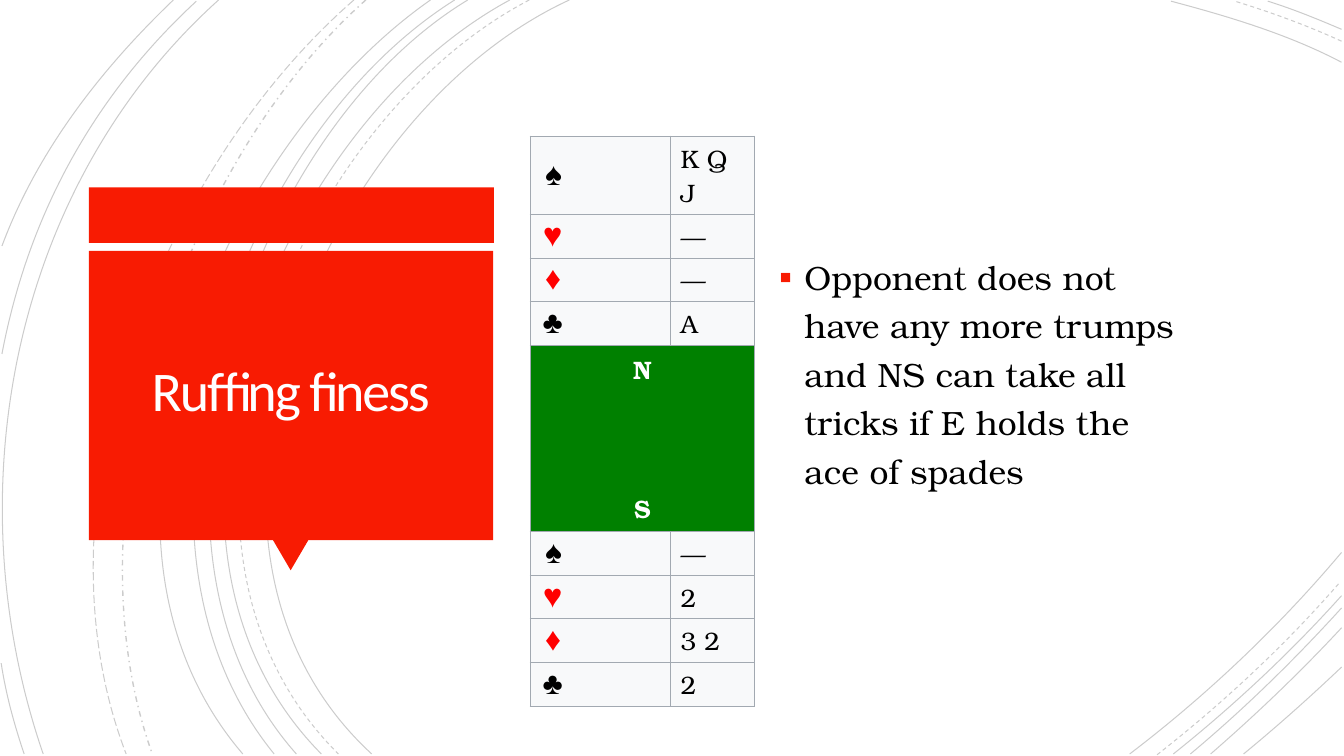
from dataclasses import dataclass
from lxml.etree import SubElement as Sub
from pptx import Presentation
from pptx.dml.color import RGBColor as RGB
from pptx.enum.dml import MSO_LINE as Dash
from pptx.enum.shapes import MSO_SHAPE as Kind
from pptx.enum.text import MSO_ANCHOR as Anchor, MSO_AUTO_SIZE as Fit, PP_ALIGN as Align
from pptx.oxml.ns import qn
from pptx.util import Cm, Pt


@dataclass
class Theme:
    red: str = "F81B02"
    cream: str = "FFFEFF"
    white: str = "FFFFFF"
    black: str = "000000"
    heart: str = "FF0000"
    green: str = "008000"
    pale: str = "F8F9FA"
    grid: str = "A2A9B1"
    head: str = "Calibri"
    text: str = "TeX Gyre Bonum"
    big: int = 40
    mid: int = 24
    small: int = 18


look = Theme()


def add_run(para, words, size, face, color, bold=False):
    run = para.add_run()
    run.text = words
    font = run.font
    font.size, font.name, font.bold = Pt(size), face, bold
    font.color.rgb = RGB.from_string(color)
    return run


def paint(item, color):
    item.fill.solid()
    item.fill.fore_color.rgb = RGB.from_string(color)


deck = Presentation()
deck.slide_width, deck.slide_height = Cm(33.87), Cm(19.05)
slide = deck.slides.add_slide(deck.slide_layouts[1])
shapes = slide.shapes
title, body = slide.placeholders

# Long arcs: top x, two control points, bottom x, dash
sweeps = [
    (14.35, (8, 2.92), (3.63, 13.72), 9.37, Dash.SOLID),
    (13.34, (7.24, 3.18), (3.12, 13.64), 8.53, Dash.DASH),
    (12.85, (6.86, 3.23), (2.79, 13.64), 8.1, Dash.SOLID),
    (11.79, (6.2, 3.38), (2.79, 13.74), 7.47, Dash.SOLID),
    (11.46, (5.87, 3.51), (2.46, 13.54), 6.91, Dash.SOLID),
    (10.85, (5.51, 3.73), (1.35, 13.44), 6.12, Dash.SOLID),
    (9.22, (4.47, 4.22), (1.65, 12.93), 3.84, Dash.DASH_DOT),
    (8.92, (3.99, 4.29), (0.74, 12.67), 3.18, Dash.LONG_DASH),
    (5.51, (0.28, 4.7), (-1.17, 12.45), 1.09, Dash.SOLID),
]
arcs = [((top, 0), one, two, (low, 19), dash) for top, one, two, low, dash in sweeps]

# Short arcs at the corners
arcs += [
    ((4.95, 0.03), (2.34, 2.44), (0.71, 5.44), (0.05, 8.92), Dash.SOLID),
    ((4.37, 0), (2.54, 1.75), (0.94, 3.81), (0.05, 6.2), Dash.SOLID),
    ((0.03, 16.71), (0.15, 17.5), (0.36, 18.26), (0.61, 19), Dash.SOLID),
    ((33.81, 1.57), (32.46, 0.86), (30.94, 0.41), (29.51, 0.03), Dash.SOLID),
    ((33.81, 1.04), (32.94, 0.64), (32, 0.3), (31.12, 0.03), Dash.DASH),
    ((33.81, 0.74), (33.2, 0.48), (32.59, 0.23), (31.95, 0.03), Dash.SOLID),
    ((28.47, 19), (30.4, 17.53), (32.23, 15.8), (33.81, 13.92), Dash.SOLID),
    ((29.16, 19.02), (30.81, 17.73), (32.39, 16.26), (33.78, 14.66), Dash.DASH),
    ((29.57, 19), (31.06, 17.81), (32.51, 16.46), (33.81, 15.01), Dash.SOLID),
    ((30, 19), (31.34, 17.88), (32.61, 16.64), (33.81, 15.32), Dash.SOLID),
    ((30.51, 19), (31.65, 18.01), (32.77, 16.94), (33.81, 15.82), Dash.SOLID),
    ((31.34, 19), (32.18, 18.31), (33, 17.58), (33.81, 16.81), Dash.SOLID),
]
for *knots, dash in arcs:
    dots = [(Cm(x), Cm(y)) for x, y in knots]
    pen = shapes.build_freeform(*dots[0])
    pen.add_line_segments(dots[1:], close=False)
    arc = pen.convert_to_shape()
    # Turn the three straight legs into one Bezier curve
    trace = arc.element.find(".//" + qn("a:path"))
    legs = trace.findall(qn("a:lnTo"))
    curve = Sub(trace, qn("a:cubicBezTo"))
    for leg in legs:
        curve.append(leg[0])
        trace.remove(leg)
    arc.shadow.inherit = False
    arc.fill.background()
    arc.line.color.rgb = RGB.from_string(look.black)
    arc.line.width = Pt(1 if dash == Dash.DASH_DOT else 0.75)
    arc.line.dash_style = dash
    tint = arc.element.find(".//" + qn("a:ln")).find(".//" + qn("a:srgbClr"))
    Sub(tint, qn("a:alpha"), val="20000")

# Red title panel with pointer
for kind, turn, *box in [
    (Kind.RECTANGLE, 0, 2.24, 4.72, 10.21, 1.4),
    (Kind.ISOSCELES_TRIANGLE, 180, 6.88, 13.61, 0.89, 0.76),
    (Kind.RECTANGLE, 0, 2.24, 6.32, 10.19, 7.29),
]:
    panel = shapes.add_shape(kind, *map(Cm, box))
    panel.rotation = turn
    panel.shadow.inherit = False
    paint(panel, look.red)
    panel.line.fill.background()

# Title and body, in front of the panel
for holder, box in [(title, (2.46, 6.53, 9.73, 6.83)), (body, (19.38, 2.64, 10.9, 14.58))]:
    shapes.element.append(holder.element)
    holder.left, holder.top, holder.width, holder.height = map(Cm, box)
    frame = holder.text_frame
    frame.word_wrap, frame.auto_size = True, Fit.NONE
    frame.vertical_anchor = Anchor.MIDDLE

frame = title.text_frame
frame.margin_left = frame.margin_right = frame.margin_top = frame.margin_bottom = Cm(0.64)
para = frame.paragraphs[0]
para.alignment, para.line_spacing = Align.CENTER, 0.85
run = add_run(para, "Ruffing finess", look.big, look.head, look.cream)
run._r.get_or_add_rPr().set("spc", "-150")

body.text_frame.margin_bottom = Cm(1.35)
para = body.text_frame.paragraphs[0]
para.alignment, para.line_spacing, para.space_before = Align.LEFT, 1.2, Pt(10)
add_run(para, "Opponent does not have any more trumps and NS can take all tricks "
        "if E holds the ace of spades", look.mid, look.text, look.black)
props = para._p.get_or_add_pPr()
props.set("marL", str(Cm(0.64)))
props.set("indent", str(-Cm(0.64)))
Sub(Sub(props, qn("a:buClr")), qn("a:srgbClr"), val=look.red)
Sub(props, qn("a:buSzPct"), val="110000")
Sub(props, qn("a:buChar"), char="▪")

# Card table: north hand, green table, south hand
suits = [("♠", look.black), ("♥", look.heart), ("♦", look.heart), ("♣", look.black)]
north = ["K Q J", "—", "—", "A"]
south = ["—", "2", "3 2", "2"]
tall = [1.97, 1.1, 1.1, 1.1, 4.64, 1.1, 1.1, 1.1, 1.1]
wide = [3.54, 2.12]
grid = shapes.add_table(len(tall), len(wide), Cm(13.36), Cm(3.43),
                        Cm(sum(wide)), Cm(sum(tall))).table
grid.first_row = grid.horz_banding = False
for col, width in zip(grid.columns, wide):
    col.width = Cm(width)
for row, height in zip(grid.rows, tall):
    row.height = Cm(height)

for first, hand in [(0, north), (5, south)]:
    for row, ((suit, color), cards) in enumerate(zip(suits, hand), first):
        for col, (words, ink) in enumerate([(suit, color), (cards, look.black)]):
            add_run(grid.cell(row, col).text_frame.paragraphs[0],
                    words, look.small, look.text, ink)

felt = grid.cell(4, 0)
felt.merge(grid.cell(4, 1))
seats = [felt.text_frame.paragraphs[0], felt.text_frame.add_paragraph()]
for para, seat in zip(seats, "NS"):
    para.alignment = Align.CENTER
    add_run(para, seat, look.small, look.text, look.white, True)
seats[1].space_before = Pt(73)

# Cell borders and fills
for cell in grid.iter_cells():
    cell.vertical_anchor = Anchor.MIDDLE
    props = cell._tc.get_or_add_tcPr()
    for side in ("lnL", "lnR", "lnT", "lnB"):
        edge = Sub(props, qn("a:" + side), w=str(Pt(0.75)))
        Sub(Sub(edge, qn("a:solidFill")), qn("a:srgbClr"), val=look.grid)
    paint(cell, look.green if cell.is_merge_origin or cell.is_spanned else look.pale)

deck.save("out.pptx")
